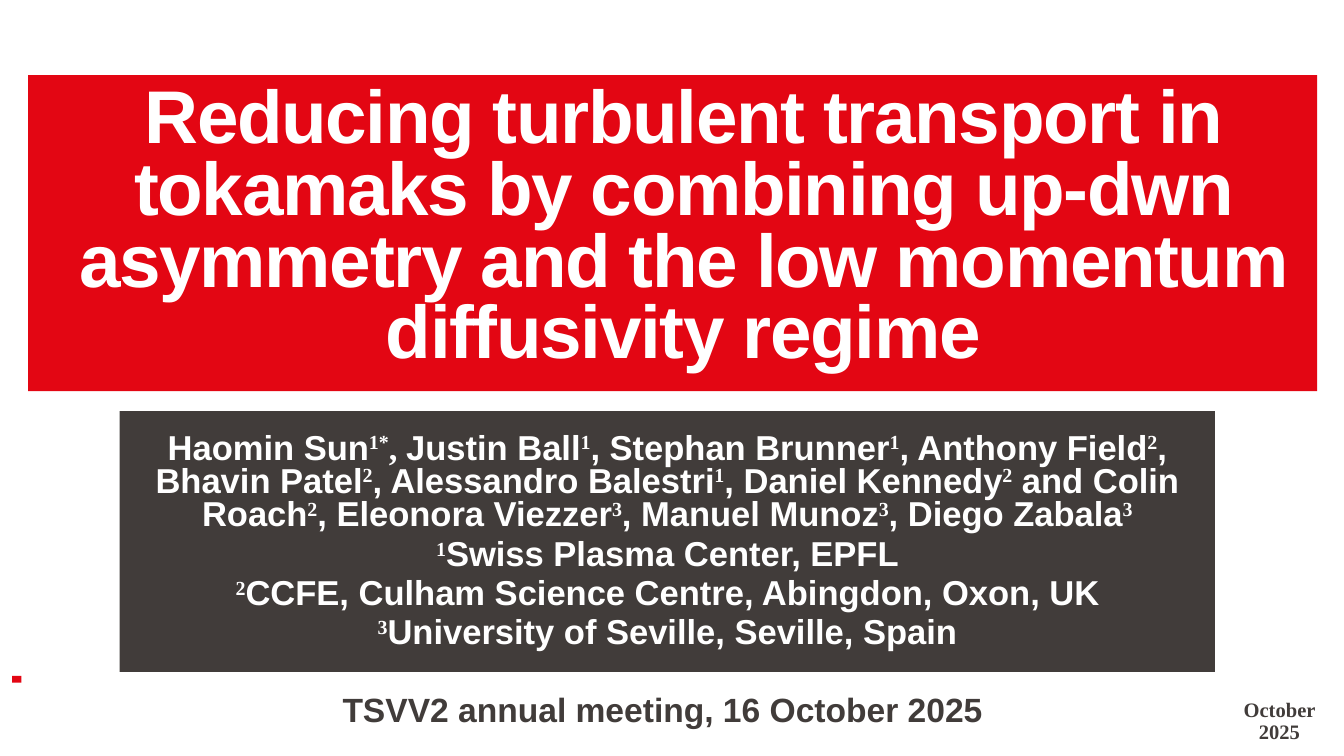
from dataclasses import dataclass

from pptx import Presentation
from pptx.dml.color import RGBColor
from pptx.enum.shapes import MSO_SHAPE
from pptx.enum.text import MSO_ANCHOR, MSO_AUTO_SIZE, PP_ALIGN
from pptx.util import Inches, Pt


@dataclass(frozen=True)
class Theme:
    red: RGBColor = RGBColor(0xE3, 0x06, 0x13)
    dark: RGBColor = RGBColor(0x41, 0x3C, 0x3A)
    white: RGBColor = RGBColor(0xFF, 0xFF, 0xFF)
    sans: str = "Arial"
    serif: str = "Times New Roman"
    title_size: float = 40
    author_size: float = 18.5
    meeting_size: float = 18
    date_size: float = 11


THEME = Theme()

TITLE = (
    "Reducing turbulent transport in tokamaks by combining up-dwn "
    "asymmetry and the low momentum diffusivity regime"
)
# Text between carets is superscript.
AUTHORS = (
    "Haomin Sun^1*^, ^^Justin Ball^1^, Stephan Brunner^1^, Anthony Field^2^, "
    "Bhavin Patel^2^, Alessandro Balestri^1^, Daniel Kennedy^2^ and Colin "
    "Roach^2^, Eleonora Viezzer^3^, Manuel Munoz^3^, Diego Zabala^3^"
)
AFFILIATIONS = [
    "^1^Swiss Plasma Center, EPFL",
    "^2^CCFE, Culham Science Centre, Abingdon, Oxon, UK",
    "^3^University of Seville, Seville, Spain",
]


def place(shape, box):
    shape.left, shape.top, shape.width, shape.height = (Inches(n) for n in box)


def fill_solid(shape, color):
    shape.fill.solid()
    shape.fill.fore_color.rgb = color


def set_frame(shape, anchor, insets=(0.1, 0.05, 0.1, 0.05)):
    """Wrap and anchor the text; insets run left, top, right, bottom."""
    frame = shape.text_frame
    frame.word_wrap = True
    frame.auto_size = MSO_AUTO_SIZE.NONE
    frame.vertical_anchor = anchor
    (frame.margin_left, frame.margin_top,
     frame.margin_right, frame.margin_bottom) = (Inches(n) for n in insets)
    return frame


def style_paragraph(paragraph, size, color, spacing, align=PP_ALIGN.CENTER,
                    before=0, name=None):
    paragraph.alignment = align
    paragraph.line_spacing = spacing
    paragraph.space_before = Pt(before)
    font = paragraph.font
    font.size, font.bold = Pt(size), True
    font.color.rgb = color
    if name:
        font.name = name


def add_marked_runs(paragraph, text):
    for index, piece in enumerate(text.split("^")):
        if not piece:
            continue
        raised = index % 2 == 1
        run = paragraph.add_run()
        run.text = piece
        # The comma standing alone after the first author is serif as well.
        run.font.name = THEME.serif if raised or piece == ", " else THEME.sans
        if raised:
            run.font._element.set("baseline", "30000")


def build_title(slide, box):
    title = slide.shapes.title
    place(title, box)
    fill_solid(title, THEME.red)
    frame = set_frame(title, MSO_ANCHOR.MIDDLE, (0.24, 0, 0.08, 0.05))
    paragraph = frame.paragraphs[0]
    run = paragraph.add_run()
    run.text = TITLE
    run.font._element.set("spc", "-70")
    style_paragraph(paragraph, THEME.title_size, THEME.white, 0.8,
                    name=THEME.sans)


def build_authors(slide, box):
    subtitle = slide.placeholders[1]
    place(subtitle, box)
    fill_solid(subtitle, THEME.dark)
    frame = set_frame(subtitle, MSO_ANCHOR.MIDDLE)
    for index, text in enumerate([AUTHORS, *AFFILIATIONS]):
        paragraph = frame.add_paragraph() if index else frame.paragraphs[0]
        add_marked_runs(paragraph, text)
        style_paragraph(paragraph, THEME.author_size, THEME.white,
                        0.6 if index else 0.8, before=7.5 if index else 0)


def add_label(slide, box, text, anchor, **style):
    label = slide.shapes.add_textbox(*(Inches(n) for n in box))
    paragraph = set_frame(label, anchor).paragraphs[0]
    paragraph.text = text
    style_paragraph(paragraph, color=THEME.dark, **style)
    return label


def build_footer(slide, box):
    """Place the red mark, the meeting line and the date."""
    left, top, width, height = box
    mark = slide.shapes.add_shape(
        MSO_SHAPE.RECTANGLE,
        Inches(left + 0.09), Inches(top + 0.03), Inches(0.07), Inches(0.05))
    mark.shadow.inherit = False
    fill_solid(mark, THEME.red)
    mark.line.fill.background()

    date_width, date_height = 0.96, 0.5
    date_box = (left + width - date_width, top + height - date_height,
                date_width, date_height)
    date = add_label(slide, date_box, "October 2025", MSO_ANCHOR.MIDDLE,
                     size=THEME.date_size, spacing=0.9, name=THEME.serif)
    fill_solid(date, THEME.white)

    add_label(slide, (left + 2.45, top + 0.16, 5.11, 0.32),
              "TSVV2 annual meeting, 16 October 2025", MSO_ANCHOR.TOP,
              size=THEME.meeting_size, spacing=0.7, name=THEME.sans,
              align=PP_ALIGN.LEFT)


def main():
    presentation = Presentation()
    presentation.slide_width = Inches(10)
    presentation.slide_height = presentation.slide_width * 9 // 16
    slide = presentation.slides.add_slide(presentation.slide_layouts[0])
    build_title(slide, (0.21, 0.56, 9.59, 2.35))
    build_authors(slide, (0.89, 3.06, 8.15, 1.94))
    build_footer(slide, (0, 5, 10, 0.62))
    presentation.save("out.pptx")


if __name__ == "__main__":
    main()
